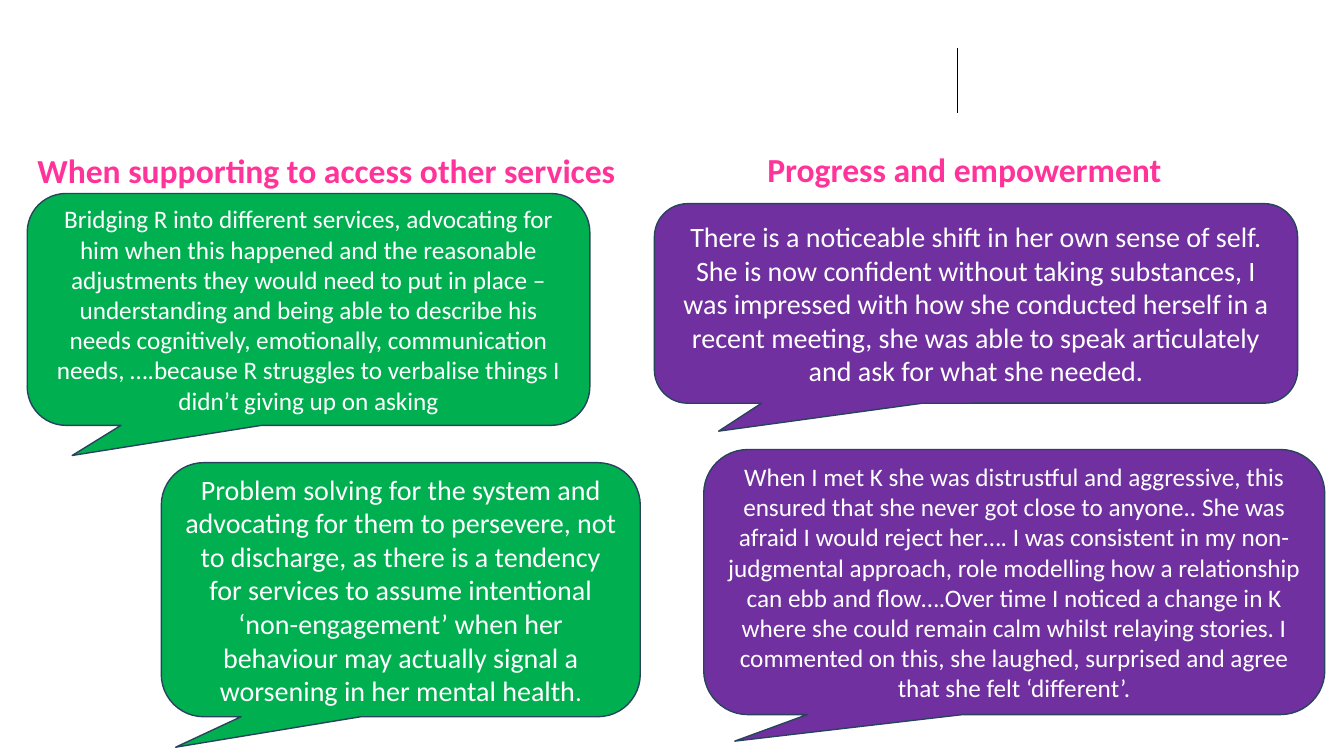
from lxml.etree import SubElement
from pptx import Presentation
from pptx.dml.color import RGBColor as RGB
from pptx.enum.shapes import MSO_CONNECTOR as CONN, MSO_SHAPE as SHAPE
from pptx.enum.text import MSO_ANCHOR as ANCHOR, MSO_AUTO_SIZE as AUTO, PP_ALIGN as ALIGN
from pptx.oxml.ns import qn
from pptx.util import Pt

PX = 9144
COLORS = {
    "pink": "FF3399",
    "green": "00B050",
    "purple": "7030A0",
    "outline": "28445D",
    "white": "FFFFFF",
    "black": "000000",
}
HEADINGS = [
    (1, (27, 144, 622, 50), "When supporting to access other services"),
    (3, (751, 143, 493, 50), "Progress and empowerment"),
]
QUOTES = [
    ((27, 192, 558, 230), (-0.42, 0.63), "green", [
        ("Bridging R into different services, advocating for him when this happened and the "
         "reasonable adjustments they would need to put in place – understanding and being able "
         "to describe his needs cognitively, emotionally, communication needs, ….because R "
         "struggles to verbalise things I didn’t giving up on asking", 18)]),
    ((649, 202, 638, 198), (-0.4, 0.64), "purple", [
        ("There is a noticeable shift in her own sense of self. She is now confident without "
         "taking substances, I was impressed with how she conducted herself in a recent meeting, "
         "she was able to speak articulately and ask for what she needed.", 20)]),
    ((160, 459, 475, 252), (-0.47, 0.62), "green", [
        ("Problem solving for the system and advocating for them to persevere, not to discharge, "
         "as there is a tendency for services to assume intentional ‘non-engagement’ when her "
         "behaviour may actually signal a worsening in her mental health", 20),
        (".", 18)]),
    ((698, 446, 616, 263), (-0.45, 0.6), "purple", [
        ("When I met K she was distrustful and aggressive, this ensured that she never got close "
         "to anyone.. She was afraid I would reject her…. I was consistent in my non-judgmental "
         "approach, role modelling how a relationship can ebb and flow….Over time I noticed a "
         "change in K where she could remain calm whilst relaying stories. I commented on this, "
         "she laughed, surprised and agree that she felt ‘different’.", 18)]),
]


def px(*lengths):
    return [n * PX for n in lengths]


def color(name):
    return RGB.from_string(COLORS[name])


def add_text(p, text, size=18, fill="white", bold=False, align=ALIGN.CENTER):
    p.alignment = align
    r = p.add_run()
    r.text = text
    r.font.name = "Calibri"
    r.font.size = Pt(size)
    r.font.bold = bold
    r.font.color.rgb = color(fill)


def add_heading(s, idx, box, text):
    sp = s.placeholders[idx]
    sp.left, sp.top, sp.width, sp.height = px(*box)
    tf = sp.text_frame
    tf.word_wrap = True
    tf.auto_size = AUTO.NONE
    tf.vertical_anchor = ANCHOR.TOP
    p = tf.paragraphs[0]
    p.space_before = Pt(0)
    add_text(p, text, size=24, fill="pink", bold=True, align=ALIGN.LEFT)


def add_callout(s, box, tip, fill, runs):
    sp = s.shapes.add_shape(SHAPE.ROUNDED_RECTANGULAR_CALLOUT, *px(*box))
    sp.shadow.inherit = False
    sp.adjustments[0], sp.adjustments[1] = tip
    sp.fill.solid()
    sp.fill.fore_color.rgb = color(fill)
    sp.line.color.rgb = color("outline")
    sp.line.width = Pt(1)
    tf = sp.text_frame
    tf.word_wrap = True
    tf.vertical_anchor = ANCHOR.MIDDLE
    for text, size in runs:
        add_text(tf.paragraphs[0], text, size=size)


def add_rule(s, x1, y1, x2, y2):
    line = s.shapes.add_connector(CONN.STRAIGHT, *px(x1, y1, x2, y2))
    line.line.color.rgb = color("black")
    line.line.width = Pt(0.5)
    SubElement(line._element.spPr, qn("a:effectLst"))


def remove_empty_placeholders(s):
    for sp in list(s.placeholders):
        if not sp.text_frame.text:
            sp.element.getparent().remove(sp.element)


def main():
    prs = Presentation()
    prs.slide_width, prs.slide_height = px(1333, 750)
    s = prs.slides.add_slide(prs.slide_layouts.get_by_name("Comparison"))
    add_rule(s, 950, 48, 950, 112)
    for heading in HEADINGS:
        add_heading(s, *heading)
    for quote in QUOTES:
        add_callout(s, *quote)
    remove_empty_placeholders(s)
    prs.save("out.pptx")


if __name__ == "__main__":
    main()
